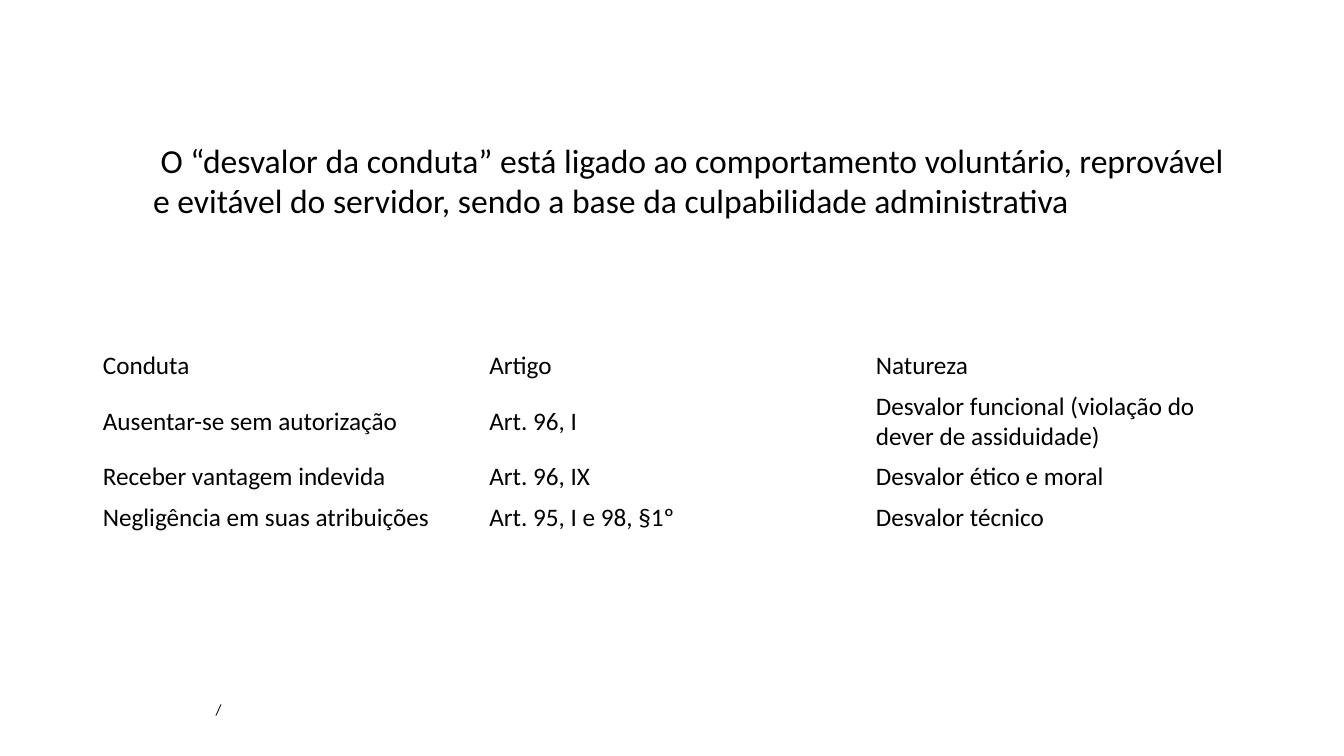
from pptx import Presentation
from pptx.dml.color import RGBColor
from pptx.enum.text import MSO_ANCHOR
from pptx.util import Inches, Pt

BLACK = RGBColor(0, 0, 0)
FONT = "Calibri"
MIDDLE = MSO_ANCHOR.MIDDLE
BLANK_LAYOUT = 6

STATEMENT = (
    " O “desvalor da conduta” está ligado ao comportamento voluntário, "
    "reprovável e evitável do servidor, sendo a base da culpabilidade "
    "administrativa"
)
CONDUCT_ROWS = [
    ("Conduta", "Artigo", "Natureza"),
    ("Ausentar-se sem autorização", "Art. 96, I",
     "Desvalor funcional (violação do dever de assiduidade)"),
    ("Receber vantagem indevida", "Art. 96, IX", "Desvalor ético e moral"),
    ("Negligência em suas atribuições", "Art. 95, I e 98, §1º",
     "Desvalor técnico"),
]
ROW_HEIGHTS = [0.4, 0.7, 0.4, 0.4]


def write_text(text_frame, text, size):
    text_frame.text = text
    text_frame.word_wrap = True
    for run in text_frame.paragraphs[0].runs:
        run.font.name = FONT
        run.font.size = Pt(size)
        run.font.bold = False
        run.font.color.rgb = BLACK


def add_text(slide, text, left, top, width, height, size):
    shape = slide.shapes.add_textbox(
        Inches(left), Inches(top), Inches(width), Inches(height))
    write_text(shape.text_frame, text, size)


def add_conduct_table(slide, left, top, width):
    shape = slide.shapes.add_table(
        len(CONDUCT_ROWS), len(CONDUCT_ROWS[0]), Inches(left), Inches(top),
        Inches(width), Inches(sum(ROW_HEIGHTS)))
    table = shape.table
    table.first_row = False
    table.horz_banding = False
    for row, height, texts in zip(table.rows, ROW_HEIGHTS, CONDUCT_ROWS):
        row.height = Inches(height)
        for cell, text in zip(row.cells, texts):
            cell.fill.background()
            cell.vertical_anchor = MIDDLE
            write_text(cell.text_frame, text, 18)


def main():
    presentation = Presentation()
    presentation.slide_width = Inches(13.33)
    presentation.slide_height = Inches(7.5)
    slide = presentation.slides.add_slide(
        presentation.slide_layouts[BLANK_LAYOUT])

    # Footer mark
    add_text(slide, "/", 2.04, 6.9, 9.25, 0.29, 11)

    # Statement above the table
    add_text(slide, STATEMENT, 1.42, 1.34, 11, 0.91, 24)

    # Conduct, article and nature
    add_conduct_table(slide, 0.92, 3.43, 11.5)

    presentation.save("out.pptx")


if __name__ == "__main__":
    main()
